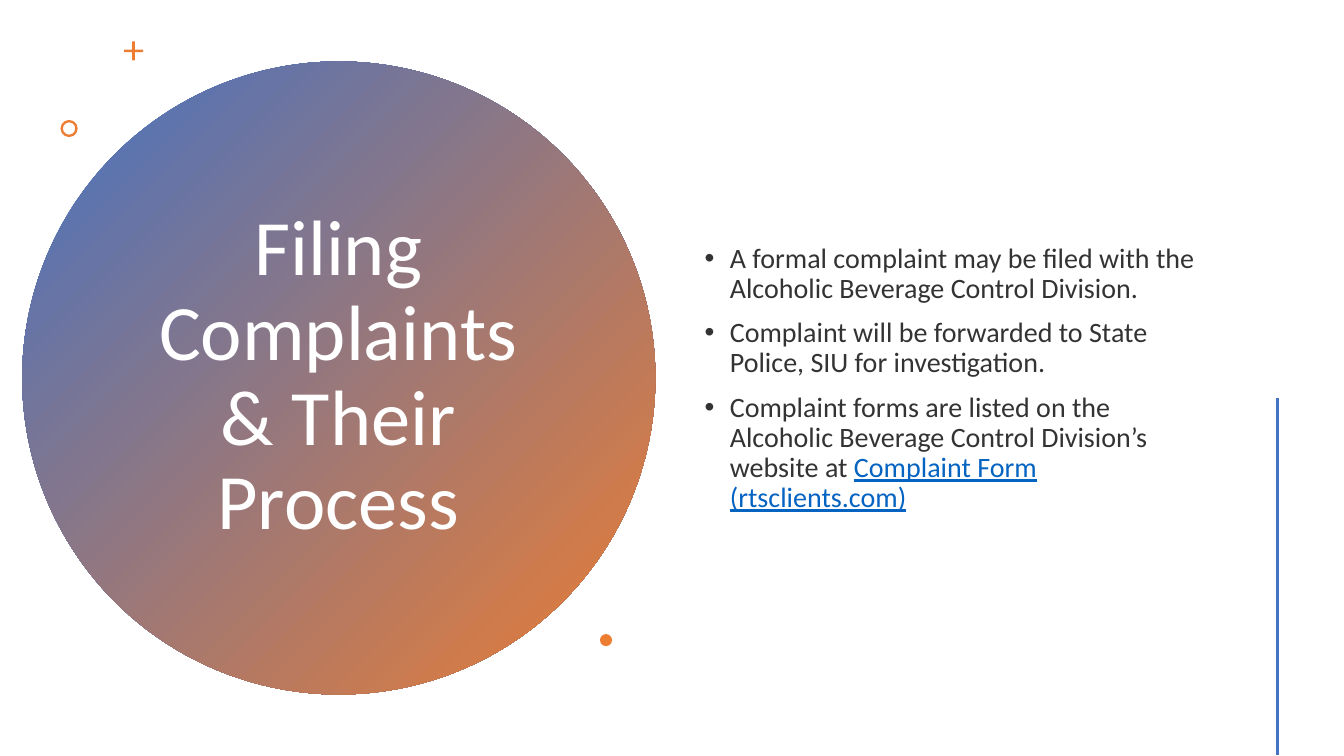
"""Build the slide on filing complaints and their process."""
from typing import NamedTuple

from lxml import etree
from pptx import Presentation
from pptx import util as u
from pptx.dml.color import RGBColor
from pptx.enum import shapes, text
from pptx.oxml.ns import qn

BLUE = RGBColor(0x44, 0x72, 0xC4)
ORANGE = RGBColor(0xED, 0x7D, 0x31)
WHITE = RGBColor(0xFF, 0xFF, 0xFF)
INK = RGBColor(0x33, 0x33, 0x33)
LINK = RGBColor(0x05, 0x63, 0xC1)

WIDE, HIGH = u.Inches(13.33), u.Inches(7.5)
FONT = "Calibri"


class Area(NamedTuple):
    """A place on the slide in percent of its width and height."""
    left: float
    top: float
    width: float
    height: float

    def emu(self) -> tuple:
        """Return the place in slide units."""
        sides = (WIDE, HIGH, WIDE, HIGH)
        return tuple(u.Emu(round(part * side / 100)) for part, side in zip(self, sides))


class Mark(NamedTuple):
    """A small orange ornament."""
    kind: shapes.MSO_SHAPE
    area: Area
    adjust: tuple = ()


class Span(NamedTuple):
    """A stretch of text with its look."""
    words: str
    color: RGBColor
    under: bool = False


DISC = Area(1.65, 8.13, 47.11, 83.73)
TITLE = Area(10.2, 18.8, 29.93, 62.27)
BODY = Area(51.69, 7.6, 39.16, 85.07)
RULE = Area(95.05, 52.67, 0, 47.2)
MARKS = (
    Mark(shapes.MSO_SHAPE.CROSS, Area(9.23, 5.47, 1.43, 2.53), (0.43,)),
    Mark(shapes.MSO_SHAPE.DONUT, Area(4.5, 15.87, 1.28, 2.27), (0.14,)),
    Mark(shapes.MSO_SHAPE.OVAL, Area(44.64, 83.87, 0.9, 1.6)),
)
HEAD = ((Span("Filing Complaints & Their Process", WHITE),),)
POINTS = (
    (Span("A formal complaint may be filed with the Alcoholic Beverage Control Division.", INK),),
    (Span("Complaint will be forwarded to State Police, SIU for investigation.", INK),),
    (
        Span("Complaint forms are listed on the Alcoholic Beverage Control Division’s website at ", INK),
        Span("Complaint Form (rtsclients.com)", LINK, True),
    ),
)


def add_form(slide, kind: shapes.MSO_SHAPE, area: Area):
    """Add a preset shape with no line and no shadow."""
    form = slide.shapes.add_shape(kind, *area.emu())
    form.shadow.inherit = False
    form.line.fill.background()
    return form


def add_disc(slide) -> None:
    """Add the large circle shaded from blue to orange."""
    fill = add_form(slide, shapes.MSO_SHAPE.OVAL, DISC).fill
    fill.gradient()
    fill.gradient_angle = 315
    for place, (stop, color) in enumerate(zip(fill.gradient_stops, (BLUE, ORANGE))):
        stop.position = place
        stop.color.rgb = color


def add_mark(slide, mark: Mark) -> None:
    """Add one ornament."""
    form = add_form(slide, mark.kind, mark.area)
    form.fill.solid()
    form.fill.fore_color.rgb = ORANGE
    for index, value in enumerate(mark.adjust):
        form.adjustments[index] = value


def add_rule(slide) -> None:
    """Add the upright line at the right edge."""
    left, top, width, height = RULE.emu()
    rule = slide.shapes.add_connector(
        shapes.MSO_CONNECTOR.STRAIGHT, left, top, left + width, top + height)
    rule.line.color.rgb = BLUE
    rule.line.width = u.Pt(2)
    etree.SubElement(rule._element.spPr, qn("a:effectLst"))


def add_text(slide, area: Area, lines: tuple, *, size: float,
             align: text.PP_ALIGN = text.PP_ALIGN.LEFT,
             bullet: str = "", gap: float = 0) -> None:
    """Add a text box centred on its height."""
    frame = slide.shapes.add_textbox(*area.emu()).text_frame
    frame.word_wrap = True
    frame.vertical_anchor = text.MSO_ANCHOR.MIDDLE
    for index, spans in enumerate(lines):
        para = frame.add_paragraph() if index else frame.paragraphs[0]
        para.alignment = align
        para.line_spacing = 0.9
        para.space_before = u.Pt(gap if index else 0)
        if bullet:
            props = para._p.get_or_add_pPr()
            props.set("marL", str(u.Inches(0.25)))
            props.set("indent", str(-u.Inches(0.25)))
            etree.SubElement(props, qn("a:buFont"), typeface="Arial")
            etree.SubElement(props, qn("a:buChar"), char=bullet)
        for span in spans:
            run = para.add_run()
            run.text = span.words
            run.font.name = FONT
            run.font.size = u.Pt(size)
            run.font.color.rgb = span.color
            if span.under:
                run.font.underline = True


def main() -> None:
    """Draw the slide and save it."""
    deck = Presentation()
    deck.slide_width, deck.slide_height = WIDE, HIGH
    slide = deck.slides.add_slide(deck.slide_layouts[6])
    add_disc(slide)
    add_text(slide, TITLE, HEAD, size=56, align=text.PP_ALIGN.CENTER)
    for mark in MARKS:
        add_mark(slide, mark)
    add_text(slide, BODY, POINTS, size=20, bullet="•", gap=10)
    add_rule(slide)
    deck.save("out.pptx")


if __name__ == "__main__":
    main()
